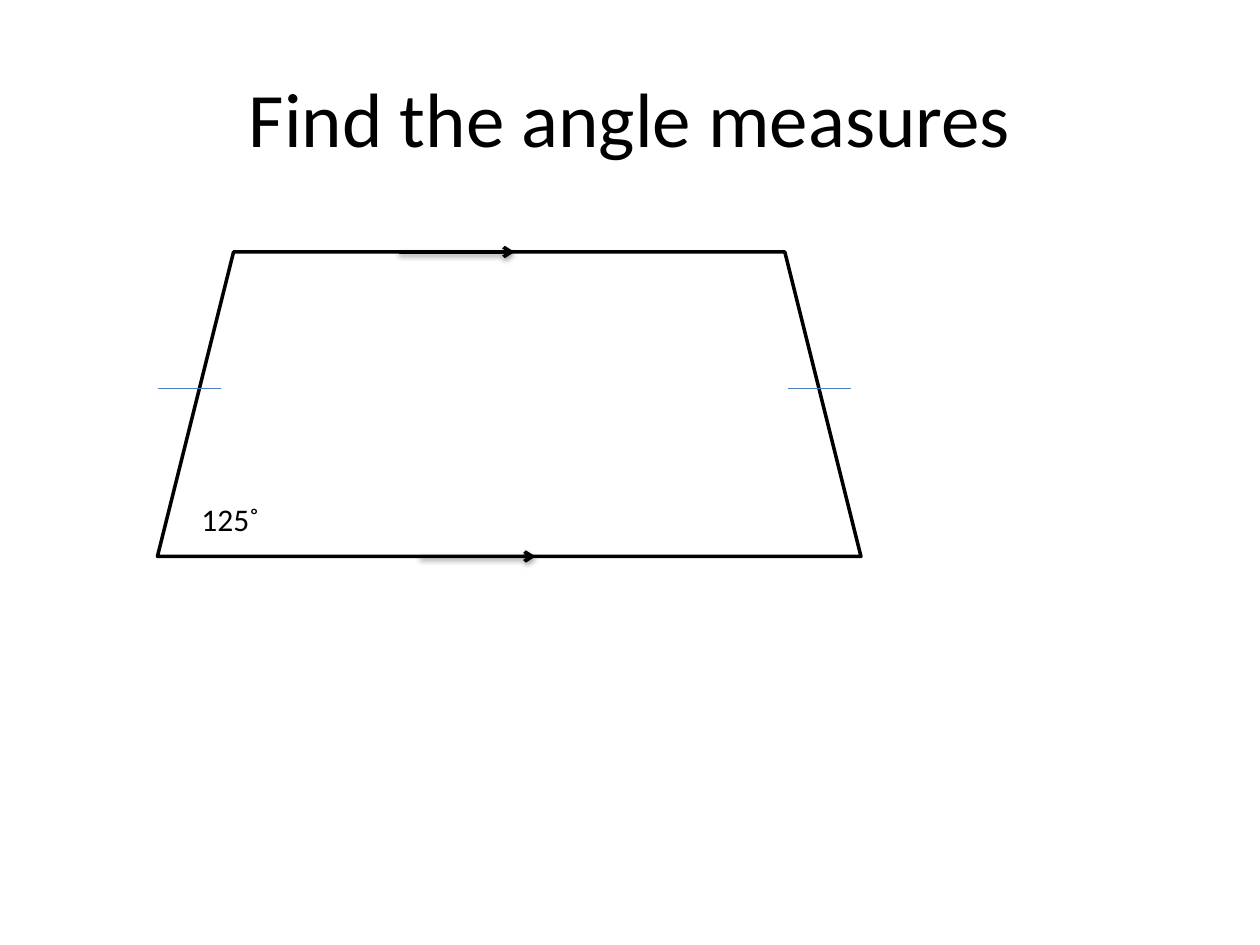
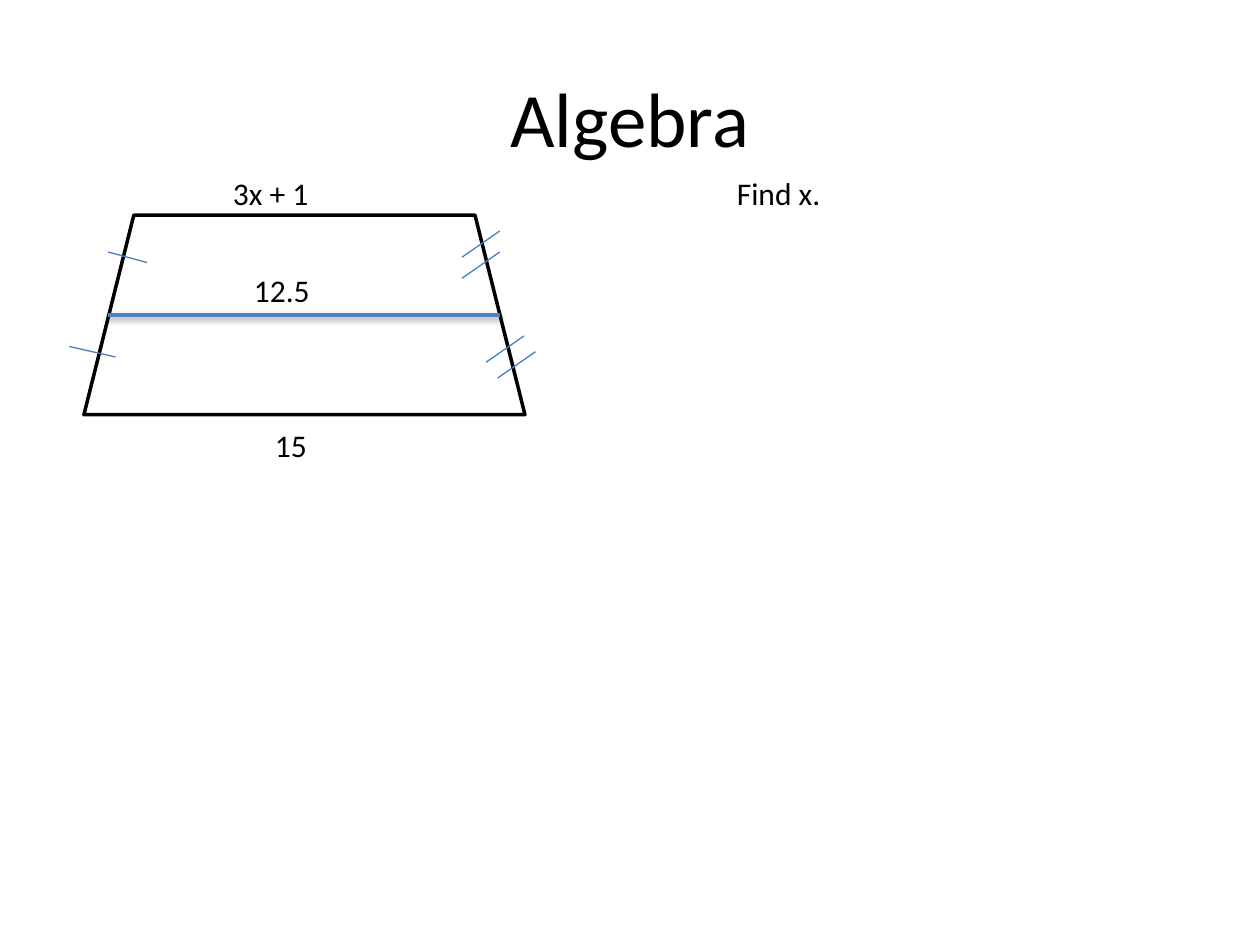
from pptx import Presentation
from pptx import util as u
from pptx.dml.color import RGBColor
from pptx.enum import shapes, text
from pptx.oxml import parse_xml
from pptx.oxml.ns import nsdecls

PX = 7620
FONT = "Calibri"
COLORS = {"ink": "000000", "paper": "FFFFFF", "segment": "4F81BD", "tick": "4B7EBC"}


def px(n):
    """Turn px (120 to the inch) into EMU."""
    return u.Emu(n * PX)


def rgb(name):
    """Look up a colour by name."""
    return RGBColor.from_string(COLORS[name])


def add_text(slide, box, words, size=18):
    """Add a one-line text box and return its shape and paragraph."""
    sp = slide.shapes.add_textbox(*map(px, box))
    tf = sp.text_frame
    tf.word_wrap = True
    tf.auto_size = text.MSO_AUTO_SIZE.SHAPE_TO_FIT_TEXT
    p = tf.paragraphs[0]
    p.text = words
    p.font.name, p.font.size = FONT, u.Pt(size)
    p.font.color.rgb = rgb("ink")
    return sp, p


def add_slide(prs, title):
    """Add a blank slide with the shared centred title."""
    slide = prs.slides.add_slide(prs.slide_layouts[6])
    sp, p = add_text(slide, (60, 36, 1080, 150), title, 44)
    sp.text_frame.auto_size = text.MSO_AUTO_SIZE.NONE
    sp.text_frame.vertical_anchor = text.MSO_ANCHOR.MIDDLE
    p.alignment = text.PP_ALIGN.CENTER
    return slide


def add_trapezoid(slide, box):
    """Add a white trapezoid with a black outline."""
    sp = slide.shapes.add_shape(shapes.MSO_SHAPE.TRAPEZOID, *map(px, box))
    sp.shadow.inherit = False
    sp.fill.solid()
    sp.fill.fore_color.rgb = rgb("paper")
    sp.line.color.rgb = rgb("ink")
    sp.line.width = u.Pt(2)


def add_line(slide, ends, color="tick", width=0.75, shadow=False, arrow=False):
    """Add a straight line, with a soft shadow or an arrowhead if asked."""
    line = slide.shapes.add_connector(shapes.MSO_CONNECTOR.STRAIGHT, *map(px, ends))
    line.line.color.rgb = rgb(color)
    line.line.width = u.Pt(width)
    if arrow:
        line.line._get_or_add_ln().append(
            parse_xml(f'<a:tailEnd {nsdecls("a")} type="arrow"/>'))
    effect = (
        '<a:outerShdw blurRad="40000" dist="20000" dir="5400000" rotWithShape="0">'
        f'<a:srgbClr val="{COLORS["ink"]}"><a:alpha val="38000"/></a:srgbClr>'
        '</a:outerShdw>') if shadow else ""
    line._element.spPr.append(
        parse_xml(f'<a:effectLst {nsdecls("a")}>{effect}</a:effectLst>'))


def build_angles(prs):
    """Build the slide on the angles of an isosceles trapezoid."""
    slide = add_slide(prs, "Find the angle measures")
    add_trapezoid(slide, (150, 240, 670, 290))
    for x, y in ((380, 240), (400, 530)):
        add_line(slide, (x, y, x + 110, y), "ink", 2, shadow=True, arrow=True)
    for x in (150, 750):
        add_line(slide, (x, 370, x + 60, 370))
    add_text(slide, (180, 470, 160, 50), "125˚")


def build_algebra(prs):
    """Build the slide on the midsegment of a trapezoid."""
    slide = add_slide(prs, "Algebra")
    add_trapezoid(slide, (80, 205, 420, 190))
    add_line(slide, (103, 300, 476, 300), "segment", 2, shadow=True)
    for ends in ((103, 240, 140, 250), (66, 330, 110, 340)):
        add_line(slide, ends)
    for x, y in ((440, 245), (440, 265), (463, 345), (474, 360)):
        add_line(slide, (x, y, x + 36, y - 25))
    for box, words in (
        ((210, 160, 220, 48), "3x + 1"),
        ((230, 252, 160, 48), "12.5"),
        ((250, 400, 200, 50), "15"),
        ((690, 160, 370, 48), "Find x."),
    ):
        add_text(slide, box, words)


def main():
    """Build and save the two slides."""
    prs = Presentation()
    prs.slide_width, prs.slide_height = px(1200), px(900)
    build_angles(prs)
    build_algebra(prs)
    prs.save("out.pptx")


if __name__ == "__main__":
    main()
